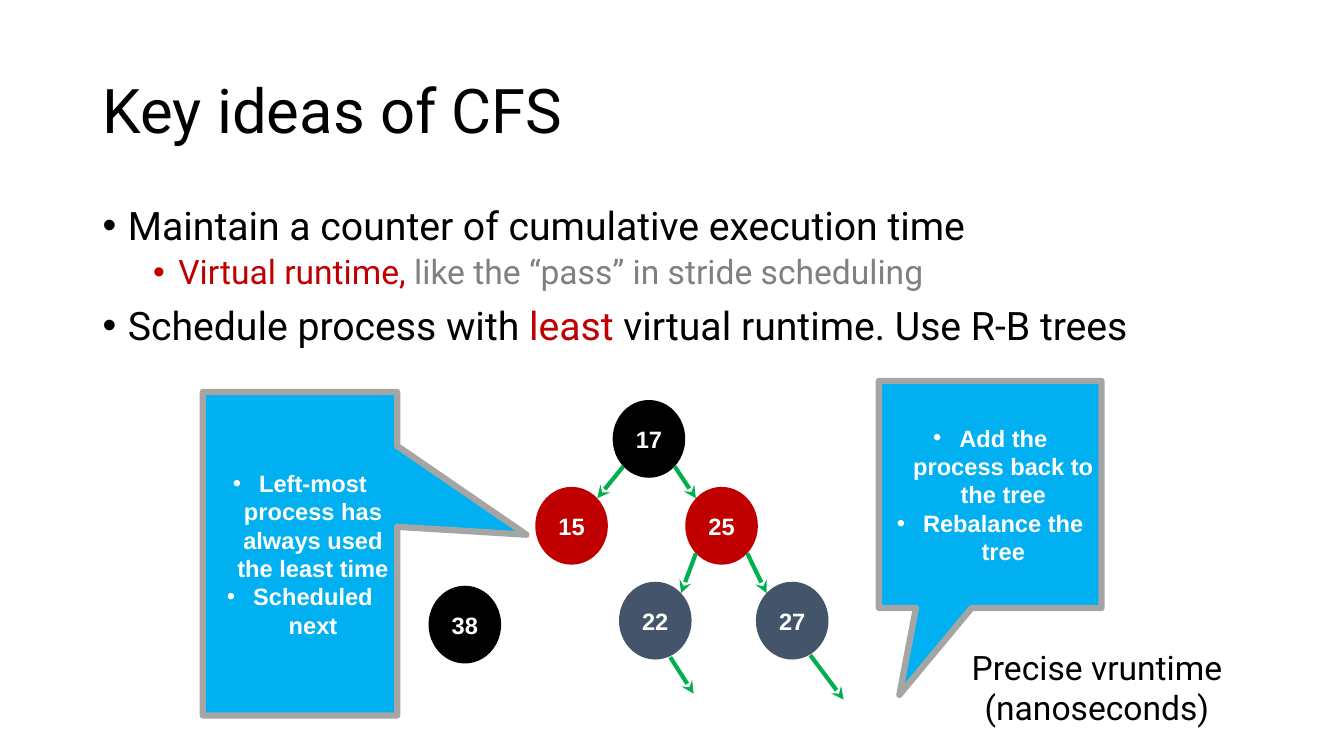
from lxml import etree
from pptx import Presentation
from pptx import util as u
from pptx.dml.color import RGBColor
from pptx.enum import shapes, text
from pptx.oxml import ns

BLACK = RGBColor(0x00, 0x00, 0x00)
WHITE = RGBColor(0xFF, 0xFF, 0xFF)
RED = RGBColor(0xC0, 0x00, 0x00)
GREY = RGBColor(0x80, 0x80, 0x80)
SLATE = RGBColor(0x44, 0x54, 0x6A)
GREEN = RGBColor(0x00, 0xB0, 0x50)
SKY = RGBColor(0x00, 0xB0, 0xF0)
SILVER = RGBColor(0xA5, 0xA5, 0xA5)

LEFT, CENTER = text.PP_ALIGN.LEFT, text.PP_ALIGN.CENTER
NODE_W, NODE_H = 1.83, 1.96
NEAR, FAR = 0.146, 0.854  # diagonal points of an ellipse, as shares of its box


class SlideBuilder:
    text_font, shape_font, shape_size = "Roboto", "Arial", 16.9

    def __init__(self, slide):
        self.slide = slide

    def add_runs(self, paragraph, runs, font, size, bold=False):
        for words, color in runs:
            run = paragraph.add_run()
            run.text = words
            run.font.name, run.font.size = font, u.Pt(size)
            run.font.bold, run.font.color.rgb = bold, color

    def add_bullet(self, paragraph, margin, hang):
        props = paragraph._p.get_or_add_pPr()
        props.set("marL", str(u.Cm(margin)))
        props.set("indent", str(-u.Cm(hang)))
        etree.SubElement(props, ns.qn("a:buFont")).set("typeface", "Arial")
        etree.SubElement(props, ns.qn("a:buChar")).set("char", "•")

    def text_box(self, box, lines, anchor=text.MSO_ANCHOR.TOP, align=LEFT,
                 line_spacing=None, bullets=False):
        """Each line is (level, size, space before, runs)."""
        frame = self.slide.shapes.add_textbox(*map(u.Cm, box)).text_frame
        frame.word_wrap, frame.vertical_anchor = True, anchor
        for i, (level, size, before, runs) in enumerate(lines):
            paragraph = frame.add_paragraph() if i else frame.paragraphs[0]
            paragraph.level, paragraph.alignment = level, align
            paragraph.space_before = u.Pt(before)
            if line_spacing:
                paragraph.line_spacing = line_spacing
            if bullets:
                self.add_bullet(paragraph, 0.635 + 1.27 * level, 0.635)
            self.add_runs(paragraph, runs, self.text_font, size)

    def filled_shape(self, kind, box, fill, lines, bullets=False):
        shape = self.slide.shapes.add_shape(kind, *map(u.Cm, box))
        shape.shadow.inherit = False
        shape.fill.solid()
        shape.fill.fore_color.rgb = fill
        shape.line.fill.background()
        frame = shape.text_frame
        frame.word_wrap, frame.vertical_anchor = True, text.MSO_ANCHOR.MIDDLE
        frame.margin_left = frame.margin_right = u.Cm(0.18)
        frame.margin_top = frame.margin_bottom = u.Cm(0.1)
        for i, words in enumerate(lines):
            paragraph = frame.add_paragraph() if i else frame.paragraphs[0]
            paragraph.alignment = CENTER
            if bullets:
                self.add_bullet(paragraph, 0.66, 0.66)
            self.add_runs(paragraph, [(words, WHITE)], self.shape_font,
                          self.shape_size, bold=True)
        return shape

    def node(self, x, y, value, fill):
        self.filled_shape(shapes.MSO_SHAPE.OVAL, (x, y, NODE_W, NODE_H),
                          fill, [str(value)])

    def callout(self, box, tip, lines):
        callout = self.filled_shape(shapes.MSO_SHAPE.RECTANGULAR_CALLOUT, box,
                                    SKY, lines, bullets=True)
        callout.adjustments[0], callout.adjustments[1] = tip
        callout.line.color.rgb, callout.line.width = SILVER, u.Pt(4.5)

    def arrow(self, start, end):
        arrow = self.slide.shapes.add_connector(
            shapes.MSO_CONNECTOR.STRAIGHT, *map(u.Cm, (*start, *end)))
        arrow.line.color.rgb, arrow.line.width = GREEN, u.Pt(3)
        etree.SubElement(arrow.line._get_or_add_ln(),
                         ns.qn("a:tailEnd")).set("type", "stealth")
        etree.SubElement(arrow._element.spPr, ns.qn("a:effectLst"))

    def branch(self, parent, child):
        """Arrow from a lower corner of parent to the facing corner of child."""
        out, into = (FAR, NEAR) if child[0] > parent[0] else (NEAR, FAR)
        self.arrow((parent[0] + out * NODE_W, parent[1] + FAR * NODE_H),
                   (child[0] + into * NODE_W, child[1] + NEAR * NODE_H))


def main():
    deck = Presentation()
    deck.slide_width, deck.slide_height = u.Cm(33.87), u.Cm(19.05)
    builder = SlideBuilder(deck.slides.add_slide(deck.slide_layouts[6]))

    # Title and key points
    builder.text_box((2.34, 1.02, 29.21, 3.68),
                     [(0, 44, 0, [("Key ideas of CFS", BLACK)])],
                     anchor=text.MSO_ANCHOR.MIDDLE, line_spacing=0.9)
    builder.text_box((2.34, 5.08, 29.21, 12.09), [
        (0, 28, 10, [("Maintain a counter of cumulative execution time", BLACK)]),
        (1, 24, 5, [("Virtual runtime, ", RED),
                    ("like the “pass” in stride scheduling", GREY)]),
        (0, 28, 10, [("Schedule process with ", BLACK), ("least", RED),
                     (" virtual runtime. Use R-B trees", BLACK)]),
    ], line_spacing=0.9, bullets=True)

    # Tree nodes: value -> left, top, fill
    tree = {
        17: (15.44, 10.08, BLACK),
        15: (13.49, 12.27, RED),
        25: (17.27, 12.27, RED),
        22: (15.6, 14.66, SLATE),
        27: (19.05, 14.66, SLATE),
        38: (10.8, 14.76, BLACK),
    }
    for value, (x, y, fill) in tree.items():
        builder.node(x, y, value, fill)

    # Branches between nodes, then the two open ones
    for parent, child in [(17, 15), (17, 25), (25, 27), (25, 22)]:
        builder.branch(tree[parent], tree[child])
    builder.arrow((20.42, 16.51), (21.26, 17.63))
    builder.arrow((16.89, 16.56), (17.48, 17.48))

    # Callouts
    builder.callout((5.11, 9.88, 4.9, 8.15), (1.165, -0.059),
                    ["Left-most process has always used the least time",
                     "Scheduled next"])
    builder.callout((22.15, 9.6, 5.61, 5.72), (-0.408, 0.883),
                    ["Add the process back to the tree",
                     "Rebalance the tree"])

    # Note on precision
    builder.text_box((22.02, 16.18, 11.25, 2.31),
                     [(0, 24, 0, [("Precise vruntime (nanoseconds)", BLACK)])],
                     align=CENTER)

    deck.save("out.pptx")


if __name__ == "__main__":
    main()
